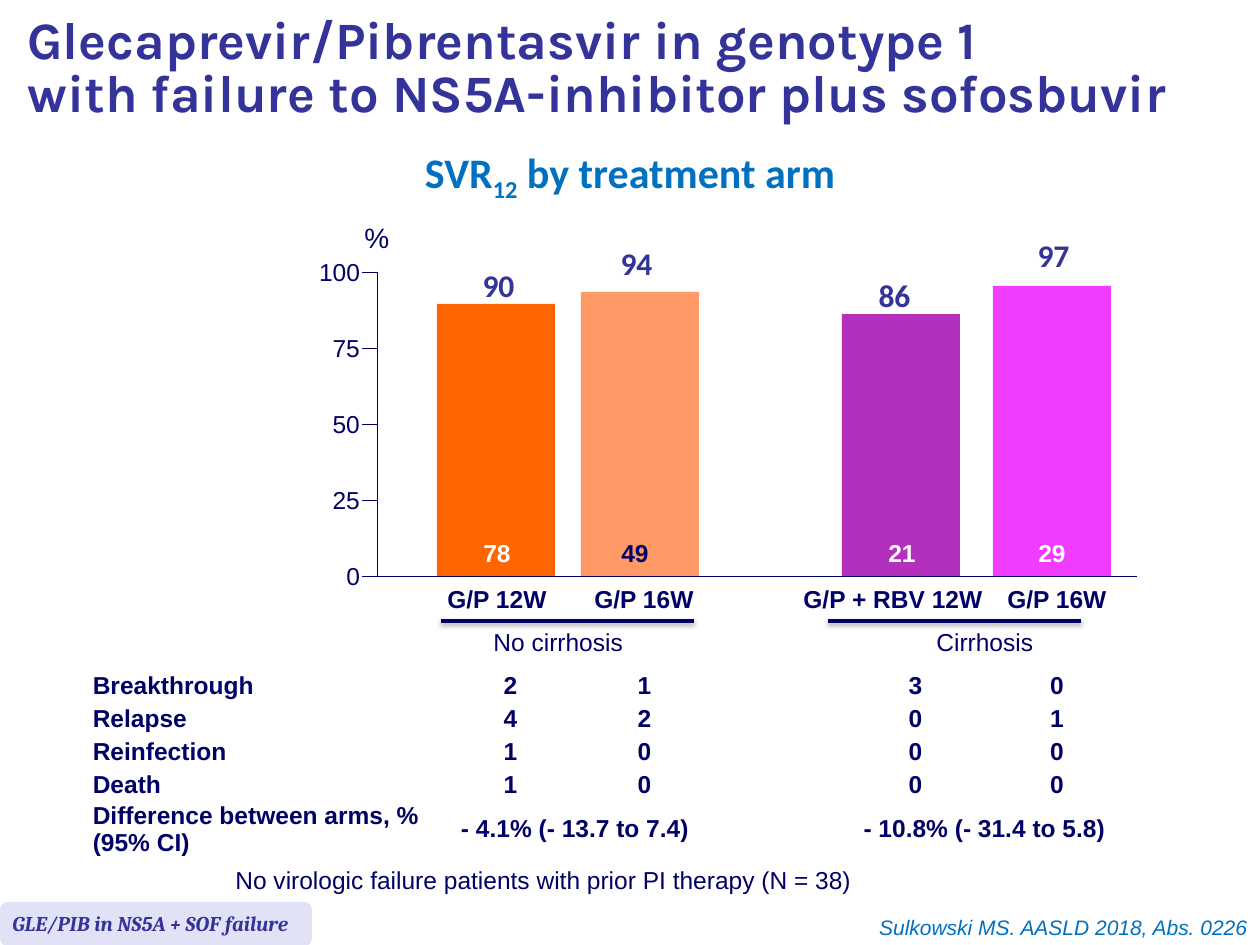
from lxml import etree
from pptx import Presentation, util as u
from pptx.dml.color import RGBColor
from pptx.enum import shapes, text
from pptx.oxml import ns

PX = 914400 // 126  # EMU in one px

NAVY = RGBColor(0x00, 0x00, 0x66)
INDIGO = RGBColor(0x33, 0x33, 0x99)
BLUE = RGBColor(0x00, 0x70, 0xC0)
WHITE = RGBColor(0xFF, 0xFF, 0xFF)
LAVENDER = RGBColor(0xE2, 0xE2, 0xF6)
ORANGE = RGBColor(0xFF, 0x66, 0x00)
PEACH = RGBColor(0xFF, 0x99, 0x66)
PURPLE = RGBColor(0xB2, 0x30, 0xBC)
MAGENTA = RGBColor(0xF1, 0x3B, 0xFE)

LEFT, CENTER, RIGHT = text.PP_ALIGN.LEFT, text.PP_ALIGN.CENTER, text.PP_ALIGN.RIGHT


def px(*lengths):
    return [u.Emu(length * PX) for length in lengths]


def style(part, size, color, name="Arial", bold=False, italic=False):
    font = part.font
    font.size, font.name, font.bold, font.italic = u.Pt(size), name, bold, italic
    font.color.rgb = color


def add_label(slide, box, words, size=14, color=NAVY, align=LEFT, wrap=False, inset=True, **look):
    frame = slide.shapes.add_textbox(*px(*box)).text_frame
    frame.word_wrap = wrap
    frame.auto_size = text.MSO_AUTO_SIZE.SHAPE_TO_FIT_TEXT
    if not inset:
        frame.margin_left = frame.margin_top = frame.margin_right = frame.margin_bottom = 0
    frame.text = words
    paragraph = frame.paragraphs[0]
    paragraph.alignment = align
    style(paragraph, size, color, **look)
    return frame


def add_block(slide, kind, box, color):
    block = slide.shapes.add_shape(kind, *px(*box))
    block.shadow.inherit = False
    block.fill.solid()
    block.fill.fore_color.rgb = color
    block.line.fill.background()


def add_line(slide, x1, y1, x2, y2, width=0.5):
    line = slide.shapes.add_connector(shapes.MSO_CONNECTOR.STRAIGHT, *px(x1, y1, x2, y2))
    line.line.color.rgb = NAVY
    line.line.width = u.Pt(width)
    return etree.SubElement(line._element.spPr, ns.qn("a:effectLst"))


def add_drop_shadow(effects):
    shadow = etree.SubElement(effects, ns.qn("a:outerShdw"), blurRad=str(u.Pt(3.1)),
                              dist=str(u.Pt(1.6)), dir="5400000", rotWithShape="0")
    black = etree.SubElement(shadow, ns.qn("a:srgbClr"), val="000000")
    etree.SubElement(black, ns.qn("a:alpha"), val="38000")


def add_title(slide, box):
    frame = add_label(slide, box,
                      "Glecaprevir/Pibrentasvir in genotype 1 \v"
                      "with failure to NS5A-inhibitor plus sofosbuvir",
                      30, INDIGO, wrap=True, name="Karla", bold=True)
    frame.auto_size = text.MSO_AUTO_SIZE.NONE
    frame.paragraphs[0].line_spacing = 0.85


def add_chart_heading(slide, box):
    frame = add_label(slide, box, "SVR", 24, BLUE, CENTER, wrap=True, name="Calibri", bold=True)
    paragraph = frame.paragraphs[0]
    paragraph.line_spacing = u.Pt(15.2)
    subscript = paragraph.add_run()
    subscript.text = "12"
    subscript.font._element.set("baseline", "-25000")
    paragraph.add_run().text = " by treatment arm"


def add_response_bars(slide, box):
    left, top, width, height = box
    base = top + height

    # Bars: x, height, colour
    for x, bar_height, color in ((616, 290, MAGENTA), (465, 262, PURPLE),
                                 (204, 284, PEACH), (60, 272, ORANGE)):
        add_block(slide, shapes.MSO_SHAPE.RECTANGLE,
                  (left + x, base - bar_height, 118, bar_height), color)

    # Axes with ticks
    add_line(slide, left, top, left, base)
    add_line(slide, left, base, left + width, base)
    for percent in range(0, 101, 25):
        y = base - height * percent // 100
        add_line(slide, left - 15, y, left, y)
        label_width = 14 * len(str(percent))
        add_label(slide, (left - 17 - label_width, y - 15, label_width, 30), str(percent),
                  align=RIGHT, inset=False)
    add_label(slide, (left - 25, top - 58, 50, 47), "%", 16)

    # Rates above the bars: middle, top
    for rate, middle, y in (("90", 121, -6), ("94", 259, -28), ("86", 517, 4), ("97", 676, -36)):
        add_label(slide, (left + middle - 16, top + y, 33, 38), rate, 18, INDIGO, CENTER,
                  inset=False, name="Calibri", bold=True)

    # Patient counts at the foot of the bars
    for count, middle, color in (("78", 120, WHITE), ("49", 258, NAVY),
                                 ("21", 525, WHITE), ("29", 675, WHITE)):
        add_label(slide, (left + middle - 14, base - 38, 28, 30), count, 14, color, CENTER,
                  inset=False, bold=True)

    # Treatment arms
    for arm, middle, arm_width in (("G/P 12W", 120, 100), ("G/P 16W", 267, 100),
                                   ("G/P + RBV 12W", 516, 190), ("G/P 16W", 680, 100)):
        add_label(slide, (left + middle - arm_width // 2, base + 8, arm_width, 30), arm,
                  align=CENTER, inset=False, bold=True)

    # Cirrhosis groups
    for group, line_x, x, group_width in (("No cirrhosis", 64, 104, 156),
                                          ("Cirrhosis", 451, 547, 123)):
        y = base + 45
        add_label(slide, (left + x, y, group_width, 43), group)
        add_drop_shadow(add_line(slide, left + line_x, y, left + line_x + 253, y, 2))


def add_outcome_table(slide, box):
    rows = (
        ("Breakthrough", "2", "1", "", "3", "0"),
        ("Relapse", "4", "2", "", "0", "1"),
        ("Reinfection", "1", "0", "", "0", "0"),
        ("Death", "1", "0", "", "0", "0"),
        ("Difference between arms, % (95% CI)", "- 4.1% (- 13.7 to 7.4)", "",
         "", "- 10.8% (- 31.4 to 5.8)", ""),
    )
    widths = (357, 139, 129, 134, 145, 138)
    table = slide.shapes.add_table(len(rows), len(widths), *px(*box)).table
    table.first_row = table.horz_banding = False
    for column, width in zip(table.columns, px(*widths)):
        column.width = width
    for r, row in enumerate(rows):
        table.rows[r].height = px(33)[0]
        for c, words in enumerate(row):
            cell = table.cell(r, c)
            cell.fill.background()
            cell.margin_left = cell.margin_right = u.Inches(0.07)
            cell.margin_top = cell.margin_bottom = 0
            cell.vertical_anchor = text.MSO_ANCHOR.MIDDLE
            paragraph = cell.text_frame.paragraphs[0]
            paragraph.alignment = CENTER if c else LEFT
            if words:
                entry = paragraph.add_run()
                entry.text = words
                style(entry, 14, NAVY, bold=True)
                paragraph.space_after = u.Pt(3)
            else:
                paragraph._p.get_or_add_endParaRPr().set("sz", "1400")
    for c in (1, 4):
        table.cell(4, c).merge(table.cell(4, c + 1))


def add_footer(slide, box):
    left, top, width, height = box
    add_block(slide, shapes.MSO_SHAPE.ROUNDED_RECTANGLE, (left, top, 312, height), LAVENDER)
    add_label(slide, (left, top + 2, 353, 38), "GLE/PIB in NS5A + SOF failure", 12, INDIGO,
              wrap=True, name="Cambria", bold=True, italic=True)
    add_label(slide, (left + 333, top + 6, width - 333, 38),
              "Sulkowski MS. AASLD 2018, Abs. 0226", 12, BLUE, RIGHT, wrap=True, italic=True)


def main():
    deck = Presentation()
    deck.slide_width, deck.slide_height = px(1260, 945)
    slide = deck.slides.add_slide(deck.slide_layouts[6])
    add_outcome_table(slide, (84, 670, 1042, 165))
    add_chart_heading(slide, (387, 171, 486, 44))
    add_response_bars(slide, (377, 272, 760, 304))
    add_label(slide, (223, 859, 643, 43),
              "No virologic failure patients with prior PI therapy (N = 38)")
    add_footer(slide, (0, 902, 1260, 44))
    add_title(slide, (15, 10, 1245, 135))
    deck.save("out.pptx")


if __name__ == "__main__":
    main()
